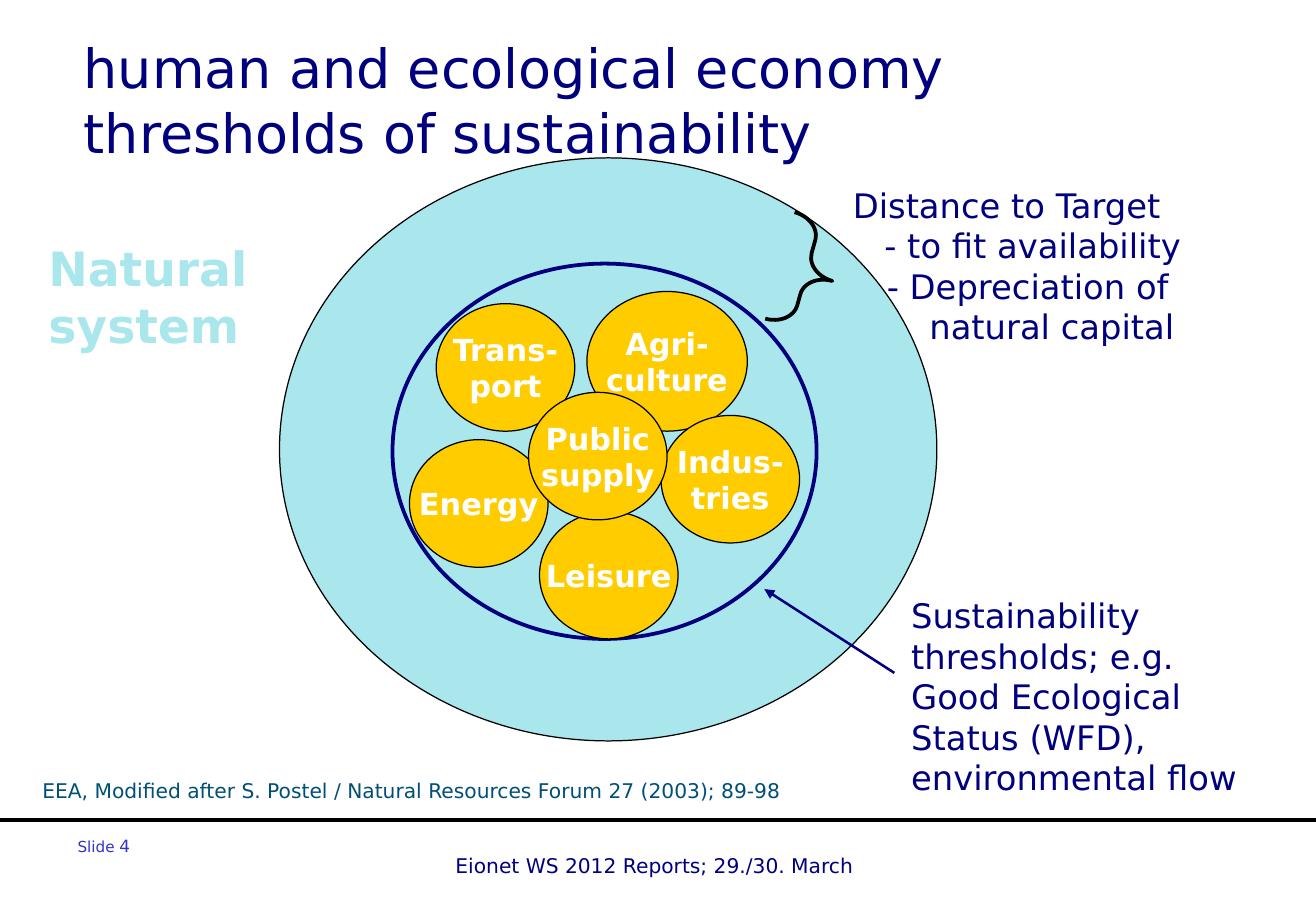
from lxml import etree
from pptx import Presentation
from pptx import util as u
from pptx.dml.color import RGBColor
from pptx.enum import shapes, text
from pptx.oxml.ns import qn

FONT = "DejaVu Sans"
NAVY, AQUA, GOLD, BLACK, WHITE = "00007E", "A9E7ED", "FFCC00", "000000", "FFFFFF"


def colour(value):
    return RGBColor.from_string(value)


def add_run(para, words, size, hue, bold=False):
    span = para.add_run()
    span.text = words
    span.font.name = FONT
    span.font.size = u.Pt(size)
    span.font.bold = bold
    span.font.color.rgb = colour(hue)


def add_lines(para, lines, size, hue, bold=False):
    for number, line in enumerate(lines):
        if number:
            para.add_line_break()
        add_run(para, line, size, hue, bold)


def add_text(page, place, lines, size, hue, bold=False, anchor=text.MSO_ANCHOR.TOP):
    box = page.shapes.add_textbox(*map(u.Inches, place))
    frame = box.text_frame
    frame.word_wrap = True
    frame.vertical_anchor = anchor
    add_lines(frame.paragraphs[0], lines, size, hue, bold)
    return frame


def add_indented(page, place, rows, size, hue):
    """Each row is a line of text and its left indent in inches."""
    frame = add_text(page, place, [], size, hue)
    for number, (words, indent) in enumerate(rows):
        para = frame.add_paragraph() if number else frame.paragraphs[0]
        properties = para._p.get_or_add_pPr()
        properties.set("marL", str(u.Inches(indent)))
        properties.set("indent", "0")
        add_run(para, words, size, hue)


def add_outline(page, kind, place, hue, width, fill=None):
    shape = page.shapes.add_shape(kind, *map(u.Inches, place))
    shape.shadow.inherit = False
    if fill:
        shape.fill.solid()
        shape.fill.fore_color.rgb = colour(fill)
    else:
        shape.fill.background()
    shape.line.color.rgb = colour(hue)
    shape.line.width = u.Pt(width)
    return shape


def add_sector(page, place, lines):
    circle = add_outline(page, shapes.MSO_SHAPE.OVAL, place, BLACK, 0.75, GOLD)
    frame = circle.text_frame
    frame.word_wrap = False
    frame.vertical_anchor = text.MSO_ANCHOR.MIDDLE
    para = frame.paragraphs[0]
    para.alignment = text.PP_ALIGN.CENTER
    add_lines(para, lines, 18, WHITE, True)


def add_line(page, start, end, hue, width, arrow=False):
    line = page.shapes.add_connector(
        shapes.MSO_CONNECTOR.STRAIGHT, *map(u.Inches, start + end))
    line.line.color.rgb = colour(hue)
    line.line.width = u.Pt(width)
    if arrow:
        head = etree.SubElement(line.line._get_or_add_ln(), qn("a:headEnd"))
        head.set("type", "triangle")
    etree.SubElement(line._element.spPr, qn("a:effectLst"))


def main():
    deck = Presentation()
    deck.slide_width, deck.slide_height = u.Inches(10.83), u.Inches(7.5)
    page = deck.slides.add_slide(deck.slide_layouts[6])

    # Footer
    add_line(page, (0, 6.75), (10.83, 6.75), BLACK, 2.25)
    add_text(page, (3.65, 6.98, 3.66, 0.3),
             ["Eionet WS 2012 Reports; 29./30. March"], 12, NAVY)
    number = add_text(page, (0.54, 6.83, 2.53, 0.52), ["Slide "], 9, "3333CC")
    add_run(number.paragraphs[0], "4", 10, "3333CC")

    # Natural system and the threshold inside it
    oval = shapes.MSO_SHAPE.OVAL
    add_outline(page, oval, (2.3, 1.3, 5.41, 4.8), BLACK, 0.75, AQUA)
    add_outline(page, oval, (3.23, 2.17, 3.49, 3.09), NAVY, 2.25)
    add_text(page, (0.3, 1.92, 1.85, 1.04), ["Natural", "system"], 28, AQUA, True)

    # Threshold label with arrow
    add_line(page, (6.29, 4.85), (7.36, 5.54), NAVY, 1.5, arrow=True)
    add_text(page, (7.4, 4.85, 2.9, 1.78),
             ["Sustainability", "thresholds; e.g.", "Good Ecological",
              "Status (WFD),", "environmental flow"], 20, NAVY)

    # Citation
    add_text(page, (0.25, 6.36, 6.49, 0.3),
             ["EEA, Modified after S. Postel / Natural Resources Forum 27 (2003); 89-98"],
             12, "004F76")

    # Economic sectors
    size = (1.14, 1.05)
    for place, lines in (
        ((3.59, 2.5) + size, ["Trans-", "port"]),
        ((4.83, 2.4, 1.32, 1.15), ["Agri-", "culture"]),
        ((5.44, 3.42) + size, ["Indus-", "tries"]),
        ((3.37, 3.62) + size, ["Energy"]),
        ((4.44, 4.21) + size, ["Leisure"]),
        ((4.35, 3.23) + size, ["Public", "supply"]),
    ):
        add_sector(page, place, lines)

    # Distance to target
    brace = add_outline(page, shapes.MSO_SHAPE.RIGHT_BRACE,
                        (6.41, 1.79, 0.45, 0.91), BLACK, 2.25)
    brace.rotation = 15.4
    brace.adjustments[0], brace.adjustments[1] = 0.39, 0.51
    add_indented(page, (6.81, 1.47, 3.64, 1.43),
                 [("Distance to Target", 0.11), ("- to fit availability", 0.37),
                  ("- Depreciation of", 0.39), ("natural capital", 0.74)], 20, NAVY)

    # Title
    add_text(page, (0.59, 0.36, 8.82, 0.92),
             ["human and ecological economy", "thresholds of sustainability"],
             32, NAVY, anchor=text.MSO_ANCHOR.MIDDLE)

    deck.save("out.pptx")


if __name__ == "__main__":
    main()
